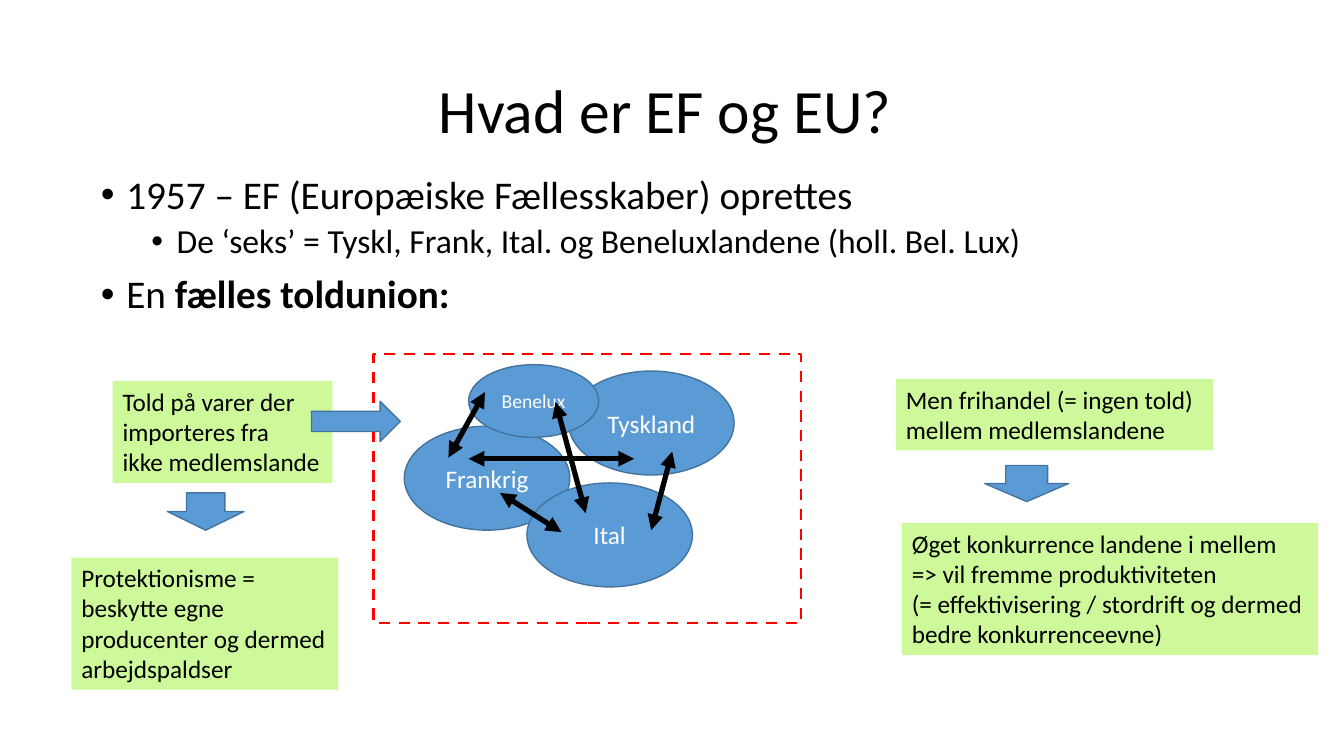
from dataclasses import dataclass

from lxml.etree import SubElement
from pptx import Presentation
from pptx.dml.color import RGBColor
from pptx.enum.dml import MSO_LINE
from pptx.enum.shapes import MSO_CONNECTOR, MSO_SHAPE
from pptx.enum.text import MSO_ANCHOR, MSO_AUTO_SIZE, PP_ALIGN
from pptx.oxml.ns import qn
from pptx.util import Cm, Pt


@dataclass(frozen=True)
class Theme:
    font: str = "Calibri"
    black: str = "000000"
    white: str = "FFFFFF"
    blue: str = "5B9BD5"
    edge: str = "43739E"
    green: str = "CEF99B"
    red: str = "FF0000"
    title: int = 44
    lists: tuple = (28, 24)
    text: int = 18
    small: int = 14


def apply(item, form):
    for name, value in form.items():
        setattr(item, name, value)


class Page:
    def __init__(self, slide, theme):
        self.slide, self.theme = slide, theme

    def place(self, shape, box):
        names = ("left", "top", "width", "height")
        apply(shape, dict(zip(names, map(Cm, box))))

    def style(self, para, size, color):
        for run in para.runs:
            apply(run.font, {"name": self.theme.font, "size": Pt(size)})
            run.font.color.rgb = RGBColor.from_string(color)

    def paint(self, shape, fill):
        shape.fill.solid()
        shape.fill.fore_color.rgb = RGBColor.from_string(fill)

    def stroke(self, line, color, width):
        line.color.rgb = RGBColor.from_string(color)
        line.width = Pt(width)

    def title(self, text, box):
        shape = self.slide.shapes.title
        self.place(shape, box)
        shape.text_frame.vertical_anchor = MSO_ANCHOR.MIDDLE
        para = shape.text_frame.paragraphs[0]
        para.text = text
        apply(para, {"alignment": PP_ALIGN.CENTER, "line_spacing": 0.9})
        self.style(para, self.theme.title, self.theme.black)

    def list(self, items, box):
        shape = self.slide.placeholders[1]
        self.place(shape, box)
        frame = shape.text_frame
        for i, (level, parts) in enumerate(items):
            para = frame.add_paragraph() if i else frame.paragraphs[0]
            apply(para, {"level": level, "line_spacing": 0.9,
                         "space_before": Pt(5 if level else 10)})
            for text, bold in parts:
                run = para.add_run()
                run.text = text
                run.font.bold = bold
            self.style(para, self.theme.lists[level], self.theme.black)
            # Bullet and hanging indent
            props = para._p.get_or_add_pPr()
            props.set("marL", str(Cm(0.64 + 1.27 * level)))
            props.set("indent", str(-Cm(0.64)))
            SubElement(props, qn("a:buFont"), typeface="Arial")
            SubElement(props, qn("a:buChar"), char="•")

    def shape(self, kind, box):
        shape = self.slide.shapes.add_shape(kind, *map(Cm, box))
        shape.shadow.inherit = False
        self.paint(shape, self.theme.blue)
        self.stroke(shape.line, self.theme.edge, 1)
        return shape

    def land(self, name, box, size):
        frame = self.shape(MSO_SHAPE.OVAL, box).text_frame
        frame.vertical_anchor = MSO_ANCHOR.MIDDLE
        para = frame.paragraphs[0]
        para.text = name
        para.alignment = PP_ALIGN.CENTER
        self.style(para, size, self.theme.white)

    def border(self, box):
        shape = self.shape(MSO_SHAPE.RECTANGLE, box)
        shape.fill.background()
        self.stroke(shape.line, self.theme.red, 2)
        shape.line.dash_style = MSO_LINE.DASH

    def note(self, text, box):
        shape = self.slide.shapes.add_textbox(*map(Cm, box))
        self.paint(shape, self.theme.green)
        frame = shape.text_frame
        apply(frame, {"word_wrap": False,
                      "auto_size": MSO_AUTO_SIZE.SHAPE_TO_FIT_TEXT})
        frame.paragraphs[0].text = text
        self.style(frame.paragraphs[0], self.theme.text, self.theme.black)

    def trade(self, ends):
        link = self.slide.shapes.add_connector(
            MSO_CONNECTOR.STRAIGHT, *map(Cm, ends))
        self.stroke(link.line, self.theme.black, 3.75)
        line = link.line._get_or_add_ln()
        for end in ("a:headEnd", "a:tailEnd"):
            SubElement(line, qn(end), type="triangle")
        SubElement(link._element.spPr, qn("a:effectLst"))


def main():
    deck = Presentation()
    apply(deck, {"slide_width": Cm(33.87), "slide_height": Cm(19.05)})
    theme = Theme()
    page = Page(deck.slides.add_slide(deck.slide_layouts[1]), theme)

    # Title and list
    page.title("Hvad er EF og EU? ", (2.34, 1.02, 29.21, 3.68))
    page.list([
        (0, [("1957 – EF (Europæiske Fællesskaber) oprettes", False)]),
        (1, [("De ‘seks’ = Tyskl, Frank, Ital. og Beneluxlandene "
              "(holl. Bel. Lux)", False)]),
        (0, [("En ", False), ("fælles toldunion:", True)]),
    ], (2.29, 4.29, 26.06, 12.09))

    # Member lands inside the customs border
    for name, left, top in (("Frankrig", 10.19, 10.74),
                            ("Tyskland", 14.33, 9.35),
                            ("Ital", 13.28, 12.17)):
        page.land(name, (left, top, 4.17, 2.62), theme.text)
    page.land("Benelux", (11.81, 9.19, 3.28, 1.83), theme.small)
    page.border((9.42, 8.92, 10.77, 6.78))

    # Green notes
    for text, box in (
        ("Told på varer der\nimporteres fra \nikke medlemslande",
         (2.84, 9.6, 5.54, 2.57)),
        ("Men frihandel (= ingen told) \nmellem medlemslandene",
         (22.58, 9.55, 8, 1.8)),
        ("Protektionisme =\nbeskytte egne \nproducenter og dermed\n"
         "arbejdspaldser", (1.8, 14.05, 6.73, 3.33)),
        ("Øget konkurrence landene i mellem\n"
         "=> vil fremme produktiviteten\n"
         "(= effektivisering / stordrift og dermed\n"
         "bedre konkurrenceevne)", (22.73, 13.18, 10.49, 3.33)),
    ):
        page.note(text, box)

    # Block arrows
    page.shape(MSO_SHAPE.RIGHT_ARROW, (7.85, 10.11, 2.24, 1.02))
    for box in ((4.22, 12.42, 1.93, 0.94), (24.82, 11.73, 2.11, 0.91)):
        page.shape(MSO_SHAPE.DOWN_ARROW, box)

    # Trade between the lands
    for ends in ((16.41, 13.36, 16.94, 11.38),
                 (14.76, 12.93, 14, 10.13),
                 (14.15, 13.41, 12.6, 12.42),
                 (15.98, 11.56, 11.81, 11.56),
                 (11.3, 11.53, 12.22, 9.88)):
        page.trade(ends)

    deck.save("out.pptx")


if __name__ == "__main__":
    main()
